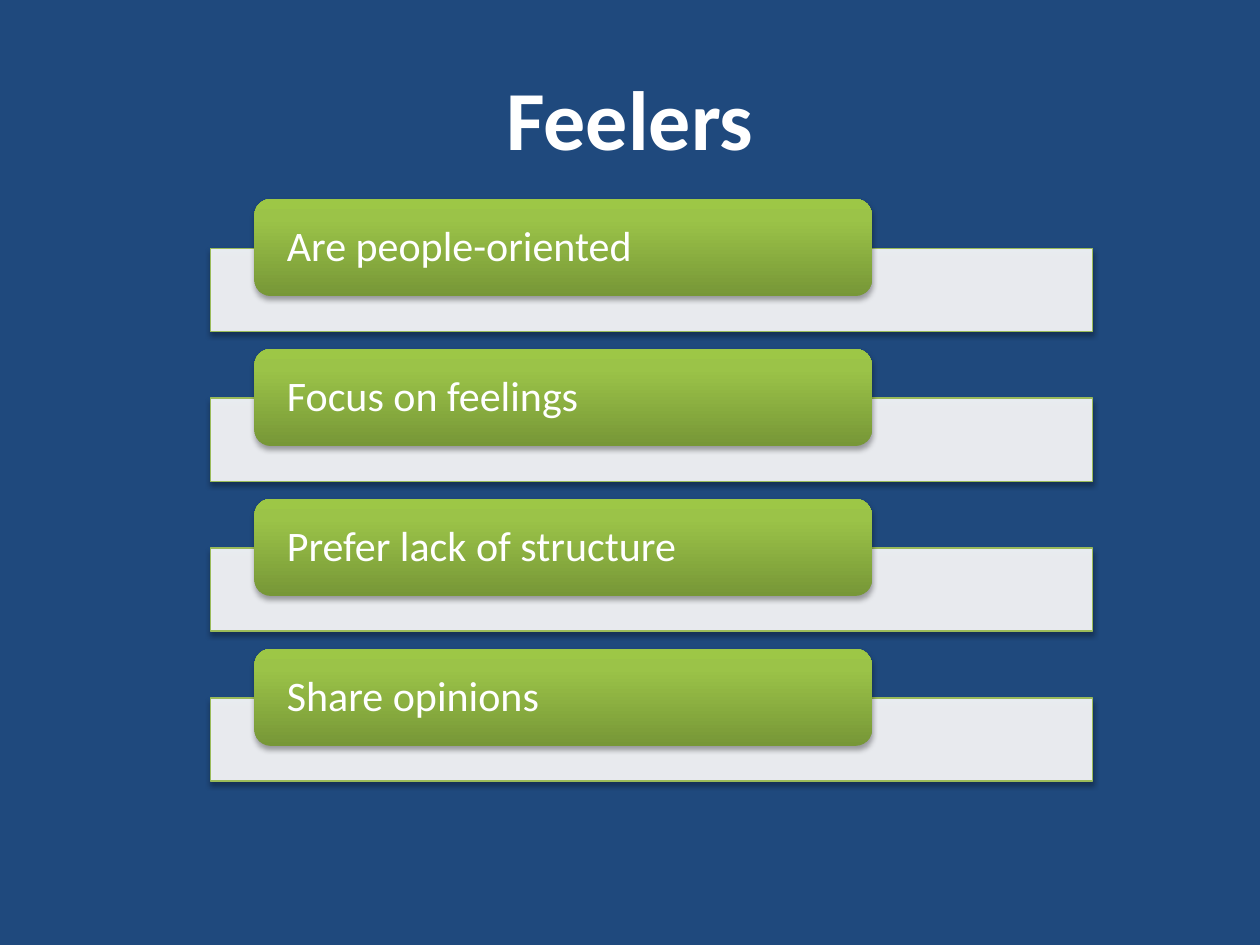
from lxml import etree
from pptx import Presentation
from pptx.dml.color import RGBColor
from pptx.enum.shapes import MSO_SHAPE
from pptx.enum.text import MSO_ANCHOR, PP_ALIGN
from pptx.oxml.ns import qn
from pptx.util import Inches, Pt

RECTANGLE = MSO_SHAPE.RECTANGLE
ROUNDED = MSO_SHAPE.ROUNDED_RECTANGLE
MIDDLE = MSO_ANCHOR.MIDDLE
LEFT, CENTER = PP_ALIGN.LEFT, PP_ALIGN.CENTER

FONT = "Calibri"
NAVY, WHITE, GREEN = "1F497D", "FFFFFF", "9BBB59"
LABEL_STOPS = [(0, "779737"), (80, "9BC348"), (100, "9DC746")]
TRAITS = [
    "Are people-oriented",
    "Focus on feelings",
    "Prefer lack of structure",
    "Share opinions",
]
ROW_PITCH = 1.19


def rgb(value):
    return RGBColor.from_string(value)


def add_color(parent, value, alpha=None):
    color = etree.SubElement(parent, qn("a:srgbClr"), val=value)
    if alpha is not None:
        etree.SubElement(color, qn("a:alpha"), val=str(alpha * 1000))


def add_soft_shadow(shape):
    shape.shadow.inherit = False
    effects = shape._element.spPr.find(qn("a:effectLst"))
    shadow = etree.SubElement(
        effects, qn("a:outerShdw"), blurRad=str(Pt(3.1)), dist=str(Pt(1.8)),
        dir=str(90 * 60000), rotWithShape="0")
    add_color(shadow, "000000", 35)


def fill_gradient(shape, stops, angle):
    """Fill with any number of (percent, colour) stops."""
    shape.fill.gradient()
    gradient = shape._element.spPr.find(qn("a:gradFill"))
    stop_list = gradient.find(qn("a:gsLst"))
    for old_stop in list(stop_list):
        stop_list.remove(old_stop)
    for percent, value in stops:
        stop = etree.SubElement(stop_list, qn("a:gs"), pos=str(percent * 1000))
        add_color(stop, value)
    gradient.find(qn("a:lin")).set("ang", str(angle * 60000))


def write(frame, text, size, align, bold=False):
    frame.word_wrap = True
    frame.vertical_anchor = MIDDLE
    paragraph = frame.paragraphs[0]
    paragraph.alignment = align
    run = paragraph.add_run()
    run.text = text
    run.font.name = FONT
    run.font.size = Pt(size)
    run.font.bold = bold
    run.font.color.rgb = rgb(WHITE)
    return paragraph


def add_title(slide, text, left, top, width, height):
    title = slide.shapes.title
    title.left, title.top = Inches(left), Inches(top)
    title.width, title.height = Inches(width), Inches(height)
    write(title.text_frame, text, 48, CENTER, bold=True)


def add_trait(slide, text, left, top, width):
    """Draw a pale bar with a green label overlapping its upper edge."""
    bar = slide.shapes.add_shape(
        RECTANGLE, Inches(left), Inches(top + 0.39), Inches(width), Inches(0.66))
    bar.fill.solid()
    bar.fill.fore_color.rgb = rgb(WHITE)
    bar_color = bar._element.spPr.find(qn("a:solidFill"))[0]
    etree.SubElement(bar_color, qn("a:alpha"), val="90000")
    bar.line.color.rgb = rgb(GREEN)
    bar.line.width = Pt(0.75)
    add_soft_shadow(bar)

    label = slide.shapes.add_shape(
        ROUNDED, Inches(left + width * 0.05), Inches(top),
        Inches(width * 0.7), Inches(0.77))
    fill_gradient(label, LABEL_STOPS, 270)
    label.line.fill.background()
    add_soft_shadow(label)
    frame = label.text_frame
    frame.margin_left = frame.margin_right = Inches(0.22)
    frame.margin_top = frame.margin_bottom = 0
    write(frame, text, 24, LEFT).line_spacing = 0.9


def add_trait_list(slide, traits, left, top, width):
    for row, trait in enumerate(traits):
        add_trait(slide, trait, left, top + row * ROW_PITCH, width)


def main():
    deck = Presentation()
    deck.slide_width, deck.slide_height = Inches(10), Inches(7.5)
    slide = deck.slides.add_slide(deck.slide_layouts[5])
    slide.background.fill.solid()
    slide.background.fill.fore_color.rgb = rgb(NAVY)
    add_title(slide, "Feelers", 0.5, 0.3, 9, 1.25)
    add_trait_list(slide, TRAITS, 1.67, 1.58, 7)
    deck.save("out.pptx")


if __name__ == "__main__":
    main()
